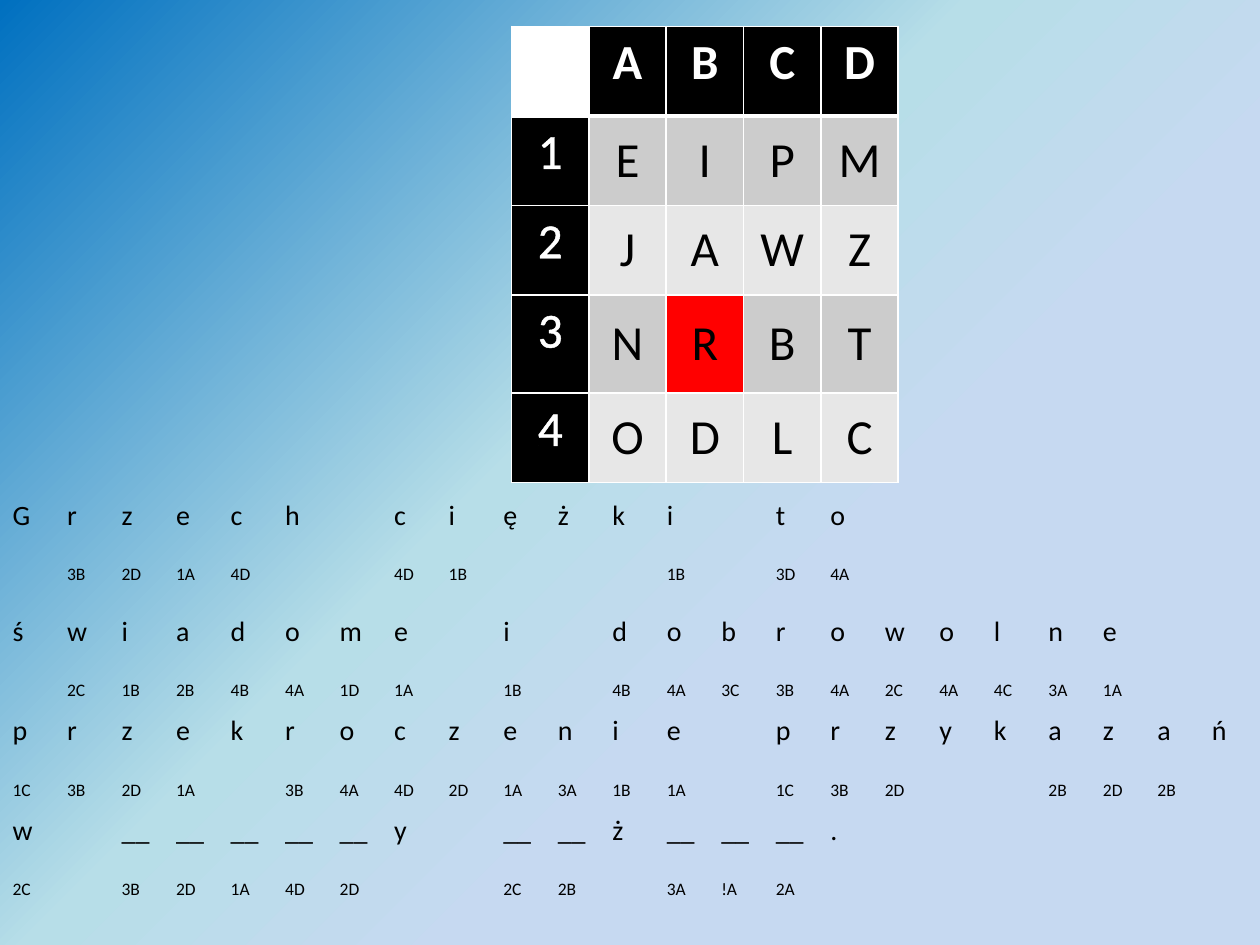
from dataclasses import dataclass
from itertools import zip_longest
from typing import NamedTuple, Optional

from lxml import etree
from pptx import Presentation
from pptx import util as u
from pptx.dml.color import RGBColor
from pptx.enum import text
from pptx.oxml.ns import qn


@dataclass(frozen=True)
class Theme:
    font: str = "Calibri"
    key_size: float = 28
    letter_size: float = 16
    code_size: float = 10
    ink: str = "000000"
    paper: str = "FFFFFF"
    bands: tuple = ("CCCCCC", "E7E7E7")
    highlight: str = "FF0000"
    background: tuple = ((0, "0070C0"), (44, "B7DEE8"), (64, "C6D9F1"), (100, "C6D9F1"))
    rule: float = 1
    header_rule: float = 3
    outline: float = 0.75


class Line(NamedTuple):
    letters: str  # "_" is a letter to fill in
    codes: str  # "-" is a letter without a code


class Area(NamedTuple):
    left: float
    top: float
    width: float
    row_heights: tuple


THEME = Theme()
NO_STYLE = "{2D5ABB26-0587-4C30-8999-92F81FD0307C}"
KEY = ("ABCD", "EIPM", "JAWZ", "NRBT", "ODLC")
HIGHLIGHTED = "R"
KEY_AREA = Area(4.06, 0.21, 3.07, (0.71, 0.71, 0.71, 0.78, 0.71))
SENTENCE = (
    Line("Grzech ciężki to", "- 3B 2D 1A 4D - - 4D 1B - - - 1B - 3D 4A"),
    Line("świadome i dobrowolne",
         "- 2C 1B 2B 4B 4A 1D 1A - 1B - 4B 4A 3C 3B 4A 2C 4A 4C 3A 1A"),
    Line("przekroczenie przykazań",
         "1C 3B 2D 1A - 3B 4A 4D 2D 1A 3A 1B 1A - 1C 3B 2D - - 2B 2D 2B"),
    Line("w _____y __ż___.", "2C - 3B 2D 1A 4D 2D - - 2C 2B - 3A !A 2A"),
)
SENTENCE_AREA = Area(0, 3.91, 9.96, (0.52, 0.4) + (0.52, 0.27) * 3)


def add_solid(parent, color: str) -> None:
    fill = etree.SubElement(parent, qn("a:solidFill"))
    etree.SubElement(fill, qn("a:srgbClr"), val=color)


def paint_background(slide) -> None:
    slide.background.fill.gradient()
    slide.background.fill.gradient_angle = 315
    stops = next(slide.background._cSld.iter(qn("a:gsLst")))
    stops.clear()
    for share, color in THEME.background:
        stop = etree.SubElement(stops, qn("a:gs"), pos=str(share * 1000))
        etree.SubElement(stop, qn("a:srgbClr"), val=color)


def add_grid(slide, area: Area, columns: int):
    """Add a plain table with equal columns."""
    rows = len(area.row_heights)
    table = slide.shapes.add_table(
        rows, columns, u.Inches(area.left), u.Inches(area.top),
        u.Inches(area.width), u.Inches(sum(area.row_heights))).table
    table.first_row = table.horz_banding = False
    table._tbl.tblPr.find(qn("a:tableStyleId")).text = NO_STYLE
    for column in table.columns:
        column.width = u.Inches(area.width / columns)
    for row, height in zip(table.rows, area.row_heights):
        row.height = u.Inches(height)
    return table


def write_cell(cell, wording: str, size: float, color: str = THEME.ink,
               fill: Optional[str] = None) -> None:
    if fill:
        cell.fill.solid()
        cell.fill.fore_color.rgb = RGBColor.from_string(fill)
    else:
        cell.fill.background()
    paragraph = cell.text_frame.paragraphs[0]
    paragraph.font.name = THEME.font
    paragraph.font.size = u.Pt(size)
    paragraph.font.color.rgb = RGBColor.from_string(color)
    if wording:
        paragraph.add_run().text = wording
    else:
        # An empty cell keeps its row low only with its own type size
        etree.SubElement(paragraph._p, qn("a:endParaRPr"), sz=str(int(size * 100)))


def rule_cell(cell, row: int) -> None:
    """Draw the white rules, with a heavy one under the header row."""
    heavy = {0: "B", 1: "T"}.get(row)
    for side in "LRTB":
        width = THEME.header_rule if side == heavy else THEME.rule
        line = etree.SubElement(cell._tc.get_or_add_tcPr(), qn(f"a:ln{side}"),
                                w=str(u.Pt(width)))
        add_solid(line, THEME.paper)


def outline_text(run) -> None:
    line = etree.SubElement(run._r.get_or_add_rPr(), qn("a:ln"),
                            w=str(u.Pt(THEME.outline)))
    add_solid(line, THEME.paper)


def add_sentence(slide) -> None:
    columns = max(len(line.letters) for line in SENTENCE)
    table = add_grid(slide, SENTENCE_AREA, columns)
    for index, line in enumerate(SENTENCE):
        letters = line.letters.ljust(columns)
        pairs = zip_longest(letters, line.codes.split(), fillvalue="-")
        for column, (letter, code) in enumerate(pairs):
            write_cell(table.cell(2 * index, column),
                       letter.strip().replace("_", "__"), THEME.letter_size)
            write_cell(table.cell(2 * index + 1, column),
                       code.replace("-", ""), THEME.code_size)


def add_key(slide) -> None:
    table = add_grid(slide, KEY_AREA, len(KEY[0]) + 1)
    for row, letters in enumerate(KEY):
        labels = [str(row) if row else "", *letters]
        for column, label in enumerate(labels):
            cell = table.cell(row, column)
            is_heading = row == 0 or column == 0
            if not label:
                fill = THEME.paper
            elif is_heading:
                fill = THEME.ink
            elif label == HIGHLIGHTED:
                fill = THEME.highlight
            else:
                fill = THEME.bands[(row - 1) % 2]
            rule_cell(cell, row)
            write_cell(cell, label, THEME.key_size,
                       THEME.paper if is_heading else THEME.ink, fill)
            paragraph = cell.text_frame.paragraphs[0]
            paragraph.alignment = text.PP_ALIGN.CENTER
            paragraph.font.bold = row == 0
            if not is_heading:
                cell.vertical_anchor = text.MSO_ANCHOR.MIDDLE
            elif row:
                outline_text(paragraph.runs[0])


def main() -> None:
    deck = Presentation()
    deck.slide_width, deck.slide_height = u.Inches(10), u.Inches(7.5)
    slide = deck.slides.add_slide(deck.slide_layouts[6])
    paint_background(slide)
    # Coded sentence below, letter key above
    add_sentence(slide)
    add_key(slide)
    deck.save("out.pptx")


if __name__ == "__main__":
    main()
